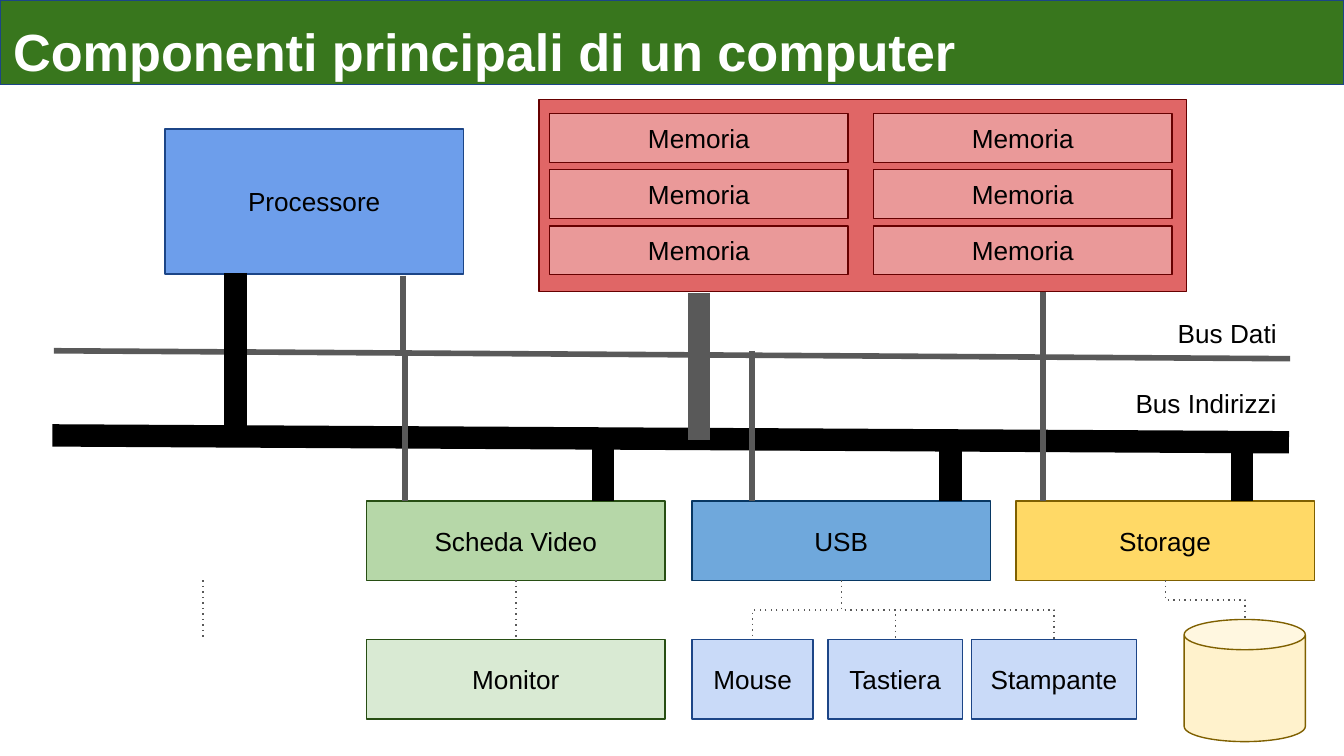
from lxml.etree import SubElement
from pptx import Presentation
from pptx.dml.color import RGBColor
from pptx.enum.shapes import MSO_CONNECTOR as Link, MSO_SHAPE as Kind
from pptx.enum.text import MSO_ANCHOR as Anchor, PP_ALIGN as Align
from pptx.oxml.ns import qn
from pptx.util import Cm, Pt

HUES = {
    "white": "FFFFFF", "black": "000000", "grey": "595959",
    "title": "38761D", "navy": "1C4587", "cpu": "6D9EEB",
    "bank": "E06666", "mem": "EA9999", "wine": "660000",
    "video": "B6D7A8", "screen": "D9EAD3", "forest": "274E13",
    "usb": "6FA8DC", "deep": "073763", "device": "C9DAF8",
    "store": "FFD966", "disk": "FFF2CC", "olive": "7F6000",
}
THICK, THIN, HAIR = 12, 3, 0.75


def hue(name):
    return RGBColor.from_string(HUES[name])


def write(shape, text, size=14, color="black", bold=False,
          align=Align.CENTER, anchor=Anchor.MIDDLE, top=0.25):
    frame = shape.text_frame
    frame.word_wrap = True
    frame.vertical_anchor = anchor
    frame.margin_left = frame.margin_right = frame.margin_bottom = Cm(0.25)
    frame.margin_top = Cm(top)
    para = frame.paragraphs[0]
    para.alignment = align
    run = para.add_run()
    run.text = text
    run.font.name = "Arial"
    run.font.size = Pt(size)
    run.font.bold = bold
    run.font.color.rgb = hue(color)


class Board:
    """Holds the slide and draws on it; all lengths are in centimetres."""

    def __init__(self, slide):
        self.shapes = slide.shapes

    def box(self, x, y, w, h, fill, edge, text="", kind=Kind.RECTANGLE, **style):
        shape = self.shapes.add_shape(kind, Cm(x), Cm(y), Cm(w), Cm(h))
        shape.shadow.inherit = False
        shape.fill.solid()
        shape.fill.fore_color.rgb = hue(fill)
        shape.line.color.rgb = hue(edge)
        shape.line.width = Pt(HAIR)
        if text:
            write(shape, text, **style)
        return shape

    def label(self, x, y, w, h, text):
        shape = self.shapes.add_textbox(Cm(x), Cm(y), Cm(w), Cm(h))
        write(shape, text, align=Align.RIGHT)

    def line(self, x1, y1, x2, y2, color="grey", width=THIN, dots=False,
             kind=Link.STRAIGHT):
        link = self.shapes.add_connector(kind, Cm(x1), Cm(y1), Cm(x2), Cm(y2))
        link.line.color.rgb = hue(color)
        link.line.width = Pt(width)
        props = link._element.spPr
        if dots:
            SubElement(props.find(qn("a:ln")), qn("a:prstDash"), val="dot")
        SubElement(props, qn("a:effectLst"))
        return link

    def elbow(self, x1, y1, x2, y2):
        """Dotted link that leaves downwards, so its frame is turned a quarter."""
        midx, midy = (x1 + x2) / 2, (y1 + y2) / 2
        long, wide = (y2 - y1) / 2, abs(x2 - x1) / 2
        side = 1 if x2 < x1 else -1
        link = self.line(midx - side * long, midy - wide,
                         midx + side * long, midy + wide,
                         width=HAIR, dots=True, kind=Link.ELBOW)
        turn = 90 if side > 0 else 270
        link._element.spPr.find(qn("a:xfrm")).set("rot", str(turn * 60000))


def main():
    deck = Presentation()
    deck.slide_width, deck.slide_height = Cm(25.4), Cm(14.29)
    board = Board(deck.slides.add_slide(deck.slide_layouts[6]))

    board.box(0, 0, 25.4, 1.6, "title", "navy",
              "Componenti principali di un computer", size=28, color="white",
              bold=True, align=Align.LEFT, anchor=Anchor.TOP, top=0.37)

    # Processor and memory
    wide = 5.64
    board.box(10.19, 1.88, 12.24, 3.63, "bank", "wine")
    board.box(3.12, 2.44, wide, 2.74, "cpu", "navy", "Processore")
    for x in (10.39, 16.51):
        for row in range(3):
            board.box(x, 2.15 + 1.06 * row, wide, 0.92, "mem", "wine", "Memoria")

    # Buses
    board.line(0.99, 8.23, 24.36, 8.36, "black", THICK)
    board.line(1.02, 6.63, 24.38, 6.78)
    board.line(4.45, 5.16, 4.45, 8.13, "black", THICK)
    board.line(13.21, 5.54, 13.21, 8.31, width=THICK)
    board.line(7.62, 5.21, 7.62, 6.71)
    board.line(19.71, 5.51, 19.71, 6.76)
    board.label(20.8, 5.74, 3.58, 1.12, "Bus Dati")
    board.label(20.52, 7.06, 3.86, 1.12, "Bus Indirizzi")

    # Controllers with their taps on both buses
    top, high, low = 9.47, 1.5, 12.09
    base = top + high
    cards = [
        (6.93, "Scheda Video", "video", "forest", 11.4, 7.65),
        (13.08, "USB", "usb", "deep", 17.96, 14.21),
        (19.2, "Storage", "store", "olive", 23.47, 19.71),
    ]
    made = []
    for x, name, fill, edge, thick, thin in cards:
        made.append(board.box(x, top, wide, high, fill, edge, name))
        board.line(thick, 8.36, thick, top, "black", THICK)
        board.line(thin, 6.63, thin, top)

    # Devices
    screen = board.box(6.93, low, wide, high, "screen", "forest", "Monitor")
    wire = board.line(9.75, base, 9.75, low, width=HAIR, dots=True)
    wire.begin_connect(made[0], 2)
    wire.end_connect(screen, 0)
    board.line(3.84, base, 3.84, low, width=HAIR, dots=True)

    for x, w, name in ((13.08, 2.29, "Mouse"), (15.65, 2.54, "Tastiera"),
                       (18.36, 3.12, "Stampante")):
        board.box(x, low, w, high, "device", "navy", name)
        board.elbow(13.08 + wide / 2, base, x + w / 2, low)

    board.box(22.38, 11.71, 2.29, 2.31, "disk", "olive", kind=Kind.CAN)
    board.elbow(19.2 + wide / 2, base, 22.38 + 2.29 / 2, 11.71)

    deck.save("out.pptx")


if __name__ == "__main__":
    main()
